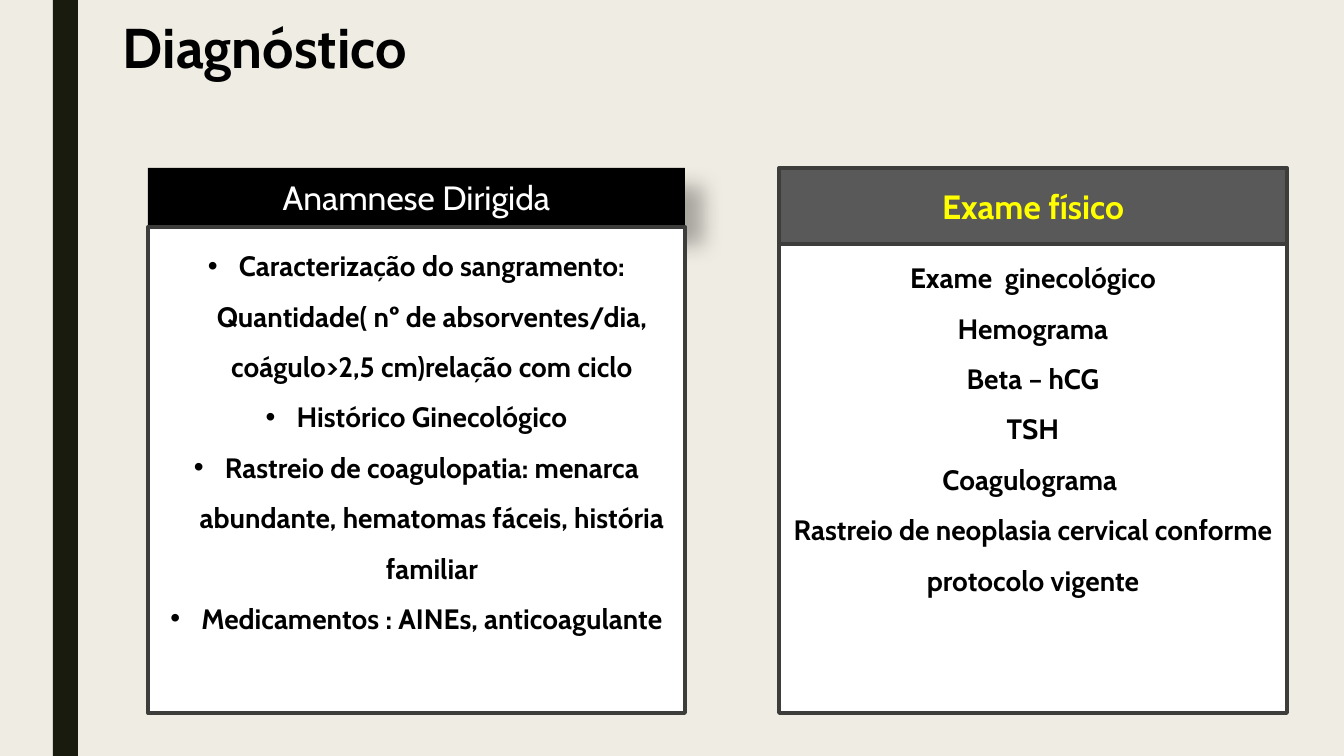
from lxml.etree import SubElement
from pptx import Presentation
from pptx.dml.color import RGBColor
from pptx.enum.shapes import MSO_SHAPE as Shape
from pptx.enum.text import MSO_ANCHOR as Anchor, PP_ALIGN as Align
from pptx.oxml.ns import qn
from pptx.util import Pt

# Content
TITLE = "Diagnóstico"
CARDS = [
    dict(left=148, width=537, split=227, inset=5, bullets=True,
         heading="Anamnese Dirigida", heading_fill="black", heading_color="white",
         heading_bold=False, heading_line=None, heading_shadow=True,
         items=["Caracterização do sangramento: Quantidade( nº de absorventes/dia, "
                "coágulo>2,5 cm)relação com ciclo",
                "Histórico Ginecológico",
                "Rastreio de coagulopatia: menarca abundante, hematomas fáceis, "
                "história familiar",
                "Medicamentos : AINEs, anticoagulante"]),
    dict(left=779, width=508, split=244, inset=0, bullets=False,
         heading="Exame físico", heading_fill="gray", heading_color="yellow",
         heading_bold=True, heading_line="border", heading_shadow=False,
         items=["Exame  ginecológico", "Hemograma", "Beta – hCG", "TSH",
                "Coagulograma ",
                "Rastreio de neoplasia cervical conforme protocolo vigente"]),
]

# Style
COLORS = dict(page="EFEDE3", bar="191B0E", black="000000", white="FFFFFF",
              gray="595959", border="3D3E3B", yellow="FFFF00")
FONT = "Cabin"
PAGE_WIDTH, PAGE_HEIGHT = 1344, 756
CARD_TOP, CARD_BOTTOM = 168, 713
INDENT = 31
EMU_PER_PX = 914400 / 100.8


def px(length):
    return round(length * EMU_PER_PX)


def color(name):
    return RGBColor.from_string(COLORS[name])


def add_rect(left, top, width, height, fill, line=None):
    rect = page.shapes.add_shape(Shape.RECTANGLE, px(left), px(top), px(width), px(height))
    rect.shadow.inherit = False
    rect.fill.solid()
    rect.fill.fore_color.rgb = color(fill)
    if line:
        rect.line.color.rgb = color(line)
        rect.line.width = Pt(2.75)
    else:
        rect.line.fill.background()
    return rect


def add_shadow(shape):
    effects = shape._element.spPr.find(qn("a:effectLst"))
    shadow = SubElement(effects, qn("a:outerShdw"), blurRad=str(Pt(15)), dist=str(Pt(18)),
                        dir="2700000", algn="tl", rotWithShape="0")
    tint = SubElement(shadow, qn("a:srgbClr"), val=COLORS["black"])
    SubElement(tint, qn("a:alpha"), val="30000")


def add_bullet(para):
    properties = para._p.get_or_add_pPr()
    properties.set("marL", str(px(INDENT)))
    properties.set("indent", str(-px(INDENT)))
    SubElement(properties, qn("a:buFont"), typeface="Arial")
    SubElement(properties, qn("a:buChar"), char="•")


def style(para, size, font_color, bold, align=Align.CENTER):
    para.alignment = align
    for span in para.runs:
        span.font.name = FONT
        span.font.size = Pt(size)
        span.font.bold = bold
        span.font.color.rgb = color(font_color)


def add_card(card):
    left, width, split = card["left"], card["width"], card["split"]

    # Heading
    header = add_rect(left, CARD_TOP, width, split - CARD_TOP,
                      card["heading_fill"], card["heading_line"])
    if card["heading_shadow"]:
        add_shadow(header)
    header.text_frame.text = card["heading"]
    header.text_frame.vertical_anchor = Anchor.MIDDLE
    style(header.text_frame.paragraphs[0], 24, card["heading_color"], card["heading_bold"])

    # Items
    body = add_rect(left, split, width, CARD_BOTTOM - split, "white", "border")
    frame = body.text_frame
    frame.word_wrap = True
    frame.vertical_anchor = Anchor.TOP
    frame.margin_top = px(card["inset"])
    frame.text = "\n".join(card["items"])
    for para in frame.paragraphs:
        para.line_spacing = 1.5
        if card["bullets"]:
            add_bullet(para)
        style(para, 20, "black", True)


# Page
deck = Presentation()
deck.slide_width, deck.slide_height = px(PAGE_WIDTH), px(PAGE_HEIGHT)
page = deck.slides.add_slide(deck.slide_layouts[6])
page.background.fill.solid()
page.background.fill.fore_color.rgb = color("page")
add_rect(53, 0, 25, PAGE_HEIGHT, "bar")

# Title
title = page.shapes.add_textbox(px(113), px(8), px(666), px(146))
title.text_frame.word_wrap = True
title.text_frame.text = TITLE
style(title.text_frame.paragraphs[0], 40, "black", True, Align.LEFT)

# Cards
for card in CARDS:
    add_card(card)

deck.save("out.pptx")
